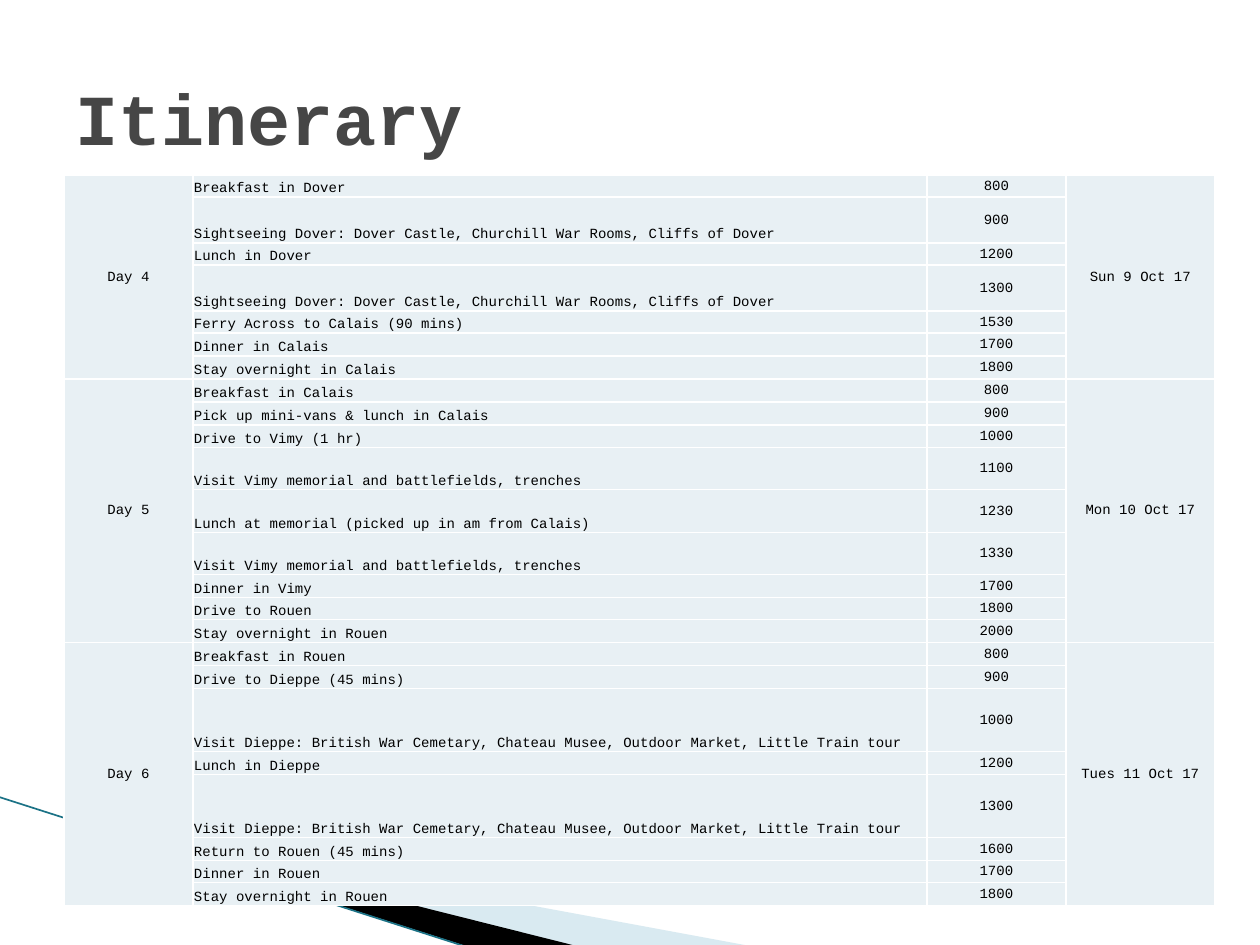
from lxml import etree
from pptx import Presentation
from pptx.dml.color import RGBColor
from pptx.enum.shapes import MSO_CONNECTOR
from pptx.enum.text import MSO_ANCHOR, PP_ALIGN
from pptx.oxml.ns import qn
from pptx.util import Pt

# Content: day, date, then (activity, time, row height in px)
DAYS = [
    ("Day 4", "Sun 9 Oct 17", [
        ("Breakfast in Dover", "800", 22),
        ("Sightseeing Dover: Dover Castle, Churchill War Rooms, Cliffs of Dover", "900", 46),
        ("Lunch in Dover", "1200", 22),
        ("Sightseeing Dover: Dover Castle, Churchill War Rooms, Cliffs of Dover", "1300", 46),
        ("Ferry Across to Calais (90 mins)", "1530", 22),
        ("Dinner in Calais", "1700", 23),
        ("Stay overnight in Calais", "1800", 23),
    ]),
    ("Day 5", "Mon 10 Oct 17", [
        ("Breakfast in Calais", "800", 23),
        ("Pick up mini-vans & lunch in Calais", "900", 23),
        ("Drive to Vimy (1 hr)", "1000", 23),
        ("Visit Vimy memorial and battlefields, trenches", "1100", 42),
        ("Lunch at memorial (picked up in am from Calais)", "1230", 43),
        ("Visit Vimy memorial and battlefields, trenches", "1330", 42),
        ("Dinner in Vimy", "1700", 23),
        ("Drive to Rouen", "1800", 22),
        ("Stay overnight in Rouen", "2000", 23),
    ]),
    ("Day 6", "Tues 11 Oct 17", [
        ("Breakfast in Rouen", "800", 23),
        ("Drive to Dieppe (45 mins)", "900", 23),
        ("Visit Dieppe: British War Cemetary, Chateau Musee, Outdoor Market, Little Train tour",
         "1000", 63),
        ("Lunch in Dieppe", "1200", 23),
        ("Visit Dieppe: British War Cemetary, Chateau Musee, Outdoor Market, Little Train tour",
         "1300", 63),
        ("Return to Rouen (45 mins)", "1600", 23),
        ("Dinner in Rouen", "1700", 22),
        ("Stay overnight in Rouen", "1800", 23),
    ]),
]
COLS = [129, 734, 139, 149]

BLACK = RGBColor(0x00, 0x00, 0x00)
GREY = RGBColor(0x46, 0x46, 0x46)
PALE = RGBColor(0xA0, 0xCB, 0xDC)
TEAL = RGBColor(0x1B, 0x72, 0x86)
MIST = RGBColor(0xE8, 0xF0, 0xF4)

# Corner wedges: points, colour, opacity in percent
WEDGES = [
    ([(69, 820), (750, 946), (575, 946), (69, 819)], PALE, 40),
    ([(67, 818), (576, 946), (469, 947), (68, 819)], BLACK, 100),
]

FACE = "Courier New"
BODY = {"name": FACE, "size": Pt(8), "bold": False}
HEAD = {"name": FACE, "size": Pt(41), "bold": True}
MID, LOW = MSO_ANCHOR.MIDDLE, MSO_ANCHOR.BOTTOM
LEFT, CENTER = PP_ALIGN.LEFT, PP_ALIGN.CENTER
STRAIGHT = MSO_CONNECTOR.STRAIGHT
SCALE = 914400 / 126


def px(n):
    return round(n * SCALE)


def write(para, text, style, color, align):
    para.alignment = align
    run = para.add_run()
    run.text = text
    for key, value in style.items():
        setattr(run.font, key, value)
    run.font.color.rgb = color


def add_wedge(slide, points, color, alpha):
    pen = slide.shapes.build_freeform(*points[0], scale=SCALE)
    pen.add_line_segments(points[1:], close=True)
    shape = pen.convert_to_shape()
    shape.shadow.inherit = False
    shape.fill.solid()
    shape.fill.fore_color.rgb = color
    shape.line.fill.background()
    if alpha < 100:
        tint = shape._element.spPr.find(".//" + qn("a:srgbClr"))
        etree.SubElement(tint, qn("a:alpha"), val=str(alpha * 1000))


def dress(cell):
    props = cell._tc.get_or_add_tcPr()
    for side in ("lnL", "lnR", "lnT", "lnB"):
        edge = etree.SubElement(props, qn("a:" + side), w=str(Pt(1)))
        fill = etree.SubElement(edge, qn("a:solidFill"))
        etree.SubElement(fill, qn("a:srgbClr"), val="FFFFFF")
    cell.fill.solid()
    cell.fill.fore_color.rgb = MIST
    cell.margin_left = cell.margin_right = cell.margin_top = px(1)
    cell.margin_bottom = 0


def put(cell, text, anchor=MID, align=CENTER):
    cell.vertical_anchor = anchor
    write(cell.text_frame.paragraphs[0], text, BODY, BLACK, align)


def add_plan(slide):
    rows = [row for _, _, part in DAYS for row in part]
    high = sum(row[2] for row in rows)
    table = slide.shapes.add_table(len(rows), len(COLS), px(64), px(175),
                                   px(sum(COLS)), px(high)).table
    table.first_row = table.horz_banding = False
    for col, width in zip(table.columns, COLS):
        col.width = px(width)
    for cell in table.iter_cells():
        dress(cell)
    for i, (task, time, height) in enumerate(rows):
        table.rows[i].height = px(height)
        put(table.cell(i, 1), task, LOW, LEFT)
        put(table.cell(i, 2), time)
    # Day and date span all rows of their day
    top = 0
    for day, date, part in DAYS:
        end = top + len(part) - 1
        for col, text in ((0, day), (3, date)):
            table.cell(top, col).merge(table.cell(end, col))
            put(table.cell(top, col), text)
        top = end + 1


def main():
    deck = Presentation()
    deck.slide_width, deck.slide_height = px(1260), px(945)
    slide = deck.slides.add_slide(deck.slide_layouts[6])

    # Corner decoration
    for wedge in WEDGES:
        add_wedge(slide, *wedge)
    line = slide.shapes.add_connector(STRAIGHT, px(-1), px(797), px(467), px(947))
    line.line.color.rgb = TEAL
    line.line.width = Pt(0.95)
    etree.SubElement(line._element.spPr, qn("a:effectLst"))

    add_plan(slide)

    # Title
    frame = slide.shapes.add_textbox(px(63), px(38), px(1134), px(157)).text_frame
    frame.word_wrap = True
    frame.vertical_anchor = MID
    write(frame.paragraphs[0], "Itinerary", HEAD, GREY, LEFT)

    deck.save("out.pptx")


if __name__ == "__main__":
    main()
